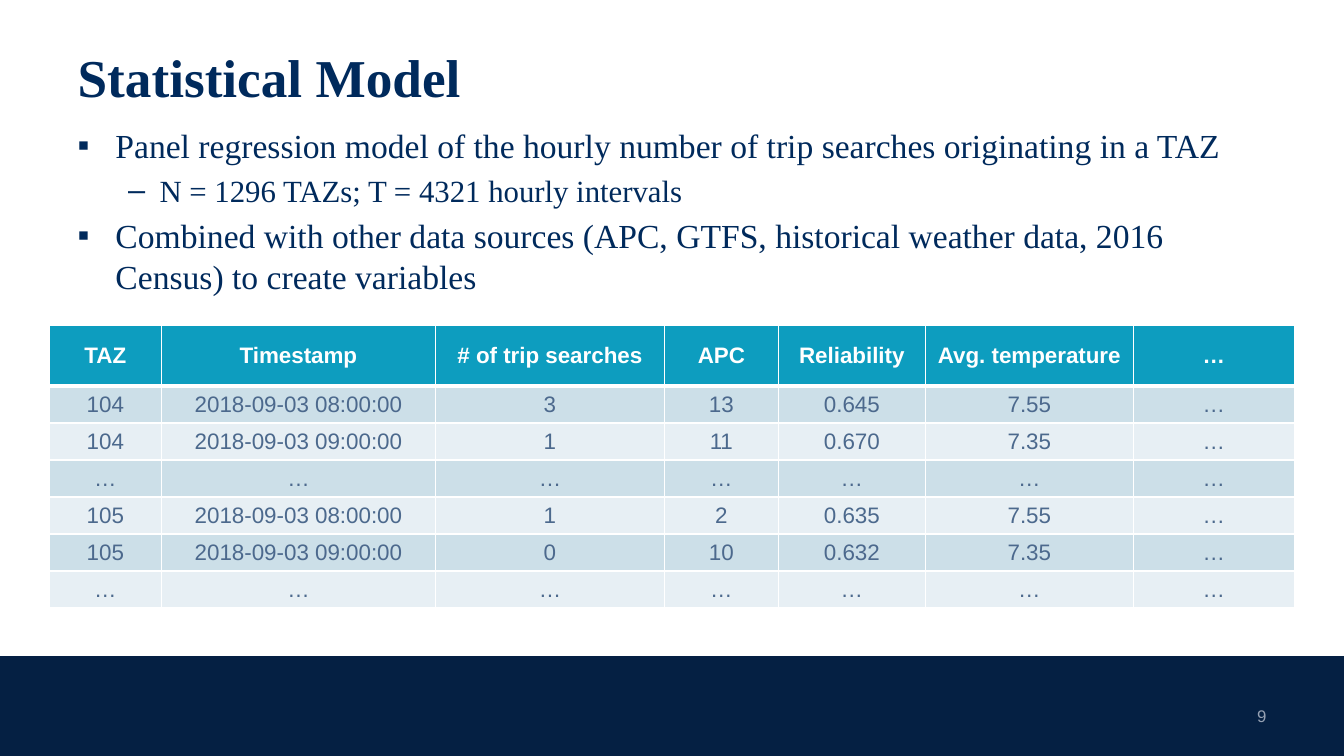
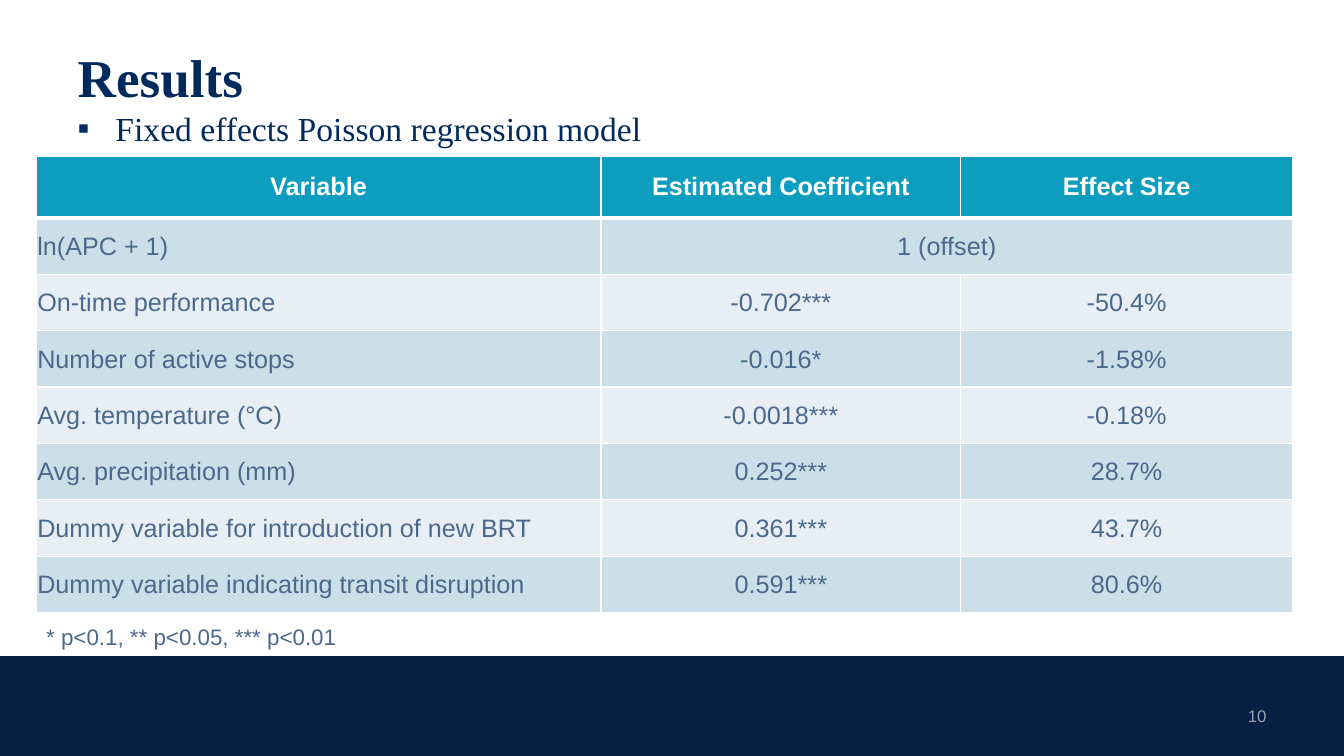
from lxml import etree
from pptx import Presentation
from pptx.dml.color import RGBColor
from pptx.enum import shapes, text
from pptx.oxml import ns
from pptx.util import Inches, Pt

COLORS = {
    "title": "002A5C",
    "band": "052043",
    "number": "96A1B3",
    "header": "0D9DBF",
    "odd_row": "CCDFE8",
    "even_row": "E7EFF4",
    "body": "4C698D",
    "white": "FFFFFF",
}
SERIF, SANS = "Times New Roman", "Arial"
LIST_SIZES = (24, 22)
SLIDE_WIDTH, SLIDE_HEIGHT = 13.33, 7.5
BAND_TOP = 6.51
CENTER, LEFT, RIGHT = text.PP_ALIGN.CENTER, text.PP_ALIGN.LEFT, text.PP_ALIGN.RIGHT


def color(name):
    return RGBColor.from_string(COLORS[name])


def style(para, size, font, color_name, bold=False, align=LEFT):
    para.alignment = align
    for span in para.runs:
        span.font.size = Pt(size)
        span.font.name = font
        span.font.bold = bold
        span.font.color.rgb = color(color_name)


def place(shape, left, top, width, height):
    shape.left, shape.top = Inches(left), Inches(top)
    shape.width, shape.height = Inches(width), Inches(height)


def add_label(page, bounds, words, size, color_name, align=LEFT, wrap=True):
    box = page.shapes.add_textbox(*map(Inches, bounds))
    frame = box.text_frame
    frame.word_wrap = wrap
    frame.text = words
    style(frame.paragraphs[0], size, SANS, color_name, align=align)
    return box


def add_page(deck, title, number):
    """Start a page with its footer band, title and number."""
    page = deck.slides.add_slide(deck.slide_layouts[1])

    # Footer band and page number
    band = page.shapes.add_shape(
        shapes.MSO_SHAPE.RECTANGLE, 0, Inches(BAND_TOP),
        Inches(SLIDE_WIDTH), Inches(SLIDE_HEIGHT - BAND_TOP))
    band.shadow.inherit = False
    band.fill.solid()
    band.fill.fore_color.rgb = color("band")
    band.line.fill.background()
    label = add_label(page, (11.65, 6.9, 1.01, 0.4), str(number), 12, "number", RIGHT)
    label.text_frame.vertical_anchor = text.MSO_ANCHOR.MIDDLE

    # Title
    heading = page.shapes.title
    place(heading, 0.67, 0.31, 12, 0.89)
    heading.text_frame.text = title
    style(heading.text_frame.paragraphs[0], 38, SERIF, "title", bold=True)
    return page


def fill_list(page, bounds, items):
    """Write (level, words) items into the body placeholder."""
    body = page.placeholders[1]
    place(body, *bounds)
    frame = body.text_frame
    for index, (level, words) in enumerate(items):
        para = frame.add_paragraph() if index else frame.paragraphs[0]
        para.text = words
        para.level = level
        if index == 0:
            para.space_before = Pt(0)
        style(para, LIST_SIZES[level], SERIF, "title")
        if level == 0:
            properties = para._p.get_or_add_pPr()
            etree.SubElement(properties, ns.qn("a:buChar")).set("char", "▪")


def set_borders(cell, top, bottom):
    """Draw white cell borders; top and bottom are widths in points."""
    properties = cell._tc.get_or_add_tcPr()
    for side, width in (("L", 1), ("R", 1), ("T", top), ("B", bottom)):
        line = etree.SubElement(properties, ns.qn(f"a:ln{side}"), w=str(Pt(width)))
        fill = etree.SubElement(line, ns.qn("a:solidFill"))
        etree.SubElement(fill, ns.qn("a:srgbClr"), val=COLORS["white"])


def format_cell(cell, words, row, size, align, tight):
    is_header = row == 0
    cell.text = words
    cell.vertical_anchor = text.MSO_ANCHOR.MIDDLE
    if tight and not is_header:
        cell.margin_left = cell.margin_right = cell.margin_top = Inches(0.01)
        cell.margin_bottom = 0
    set_borders(cell, 3 if row == 1 else 1, 3 if is_header else 1)
    fill_name = "header" if is_header else "odd_row" if row % 2 else "even_row"
    cell.fill.solid()
    cell.fill.fore_color.rgb = color(fill_name)
    style(cell.text_frame.paragraphs[0], size, SANS,
          "white" if is_header else "body", is_header,
          CENTER if is_header else align)


def add_grid(page, left, top, widths, header_height, row_height, rows, size,
             first_align=CENTER, tight=False):
    """Add a banded table whose first row is the header."""
    height = header_height + row_height * (len(rows) - 1)
    frame = page.shapes.add_table(
        len(rows), len(widths), Inches(left), Inches(top),
        Inches(sum(widths)), Inches(height))
    table = frame.table
    table.horz_banding = False
    for column, width in zip(table.columns, widths):
        column.width = Inches(width)
    for r, values in enumerate(rows):
        table.rows[r].height = Inches(row_height if r else header_height)
        for c, words in enumerate(values):
            align = CENTER if c else first_align
            format_cell(table.cell(r, c), words, r, size, align, tight)
    return table


def build_model(deck):
    page = add_page(deck, "Statistical Model", 9)
    fill_list(page, (0.67, 1.19, 12, 5.32), [
        (0, "Panel regression model of the hourly number of trip searches originating in a TAZ"),
        (1, "N = 1296 TAZs; T = 4321 hourly intervals"),
        (0, "Combined with other data sources (APC, GTFS, historical weather data, "
            "2016 Census) to create variables"),
    ])
    gap = ["…"] * 7
    add_grid(page, 0.49, 3.23, [1.11, 2.72, 2.27, 1.13, 1.46, 2.06, 1.6], 0.6, 0.35, [
        ["TAZ", "Timestamp", "# of trip searches", "APC", "Reliability",
         "Avg. temperature", "…"],
        ["104", "2018-09-03 08:00:00", "3", "13", "0.645", "7.55", "…"],
        ["104", "2018-09-03 09:00:00", "1", "11", "0.670", "7.35", "…"],
        gap,
        ["105", "2018-09-03 08:00:00", "1", "2", "0.635", "7.55", "…"],
        ["105", "2018-09-03 09:00:00", "0", "10", "0.632", "7.35", "…"],
        gap,
    ], size=16)


def build_results(deck):
    page = add_page(deck, "Results", 10)
    fill_list(page, (0.67, 1.02, 10.52, 0.58), [
        (0, "Fixed effects Poisson regression model"),
    ])
    table = add_grid(page, 0.36, 1.55, [5.6, 3.57, 3.29], 0.61, 0.56, [
        ["Variable", "Estimated Coefficient", "Effect Size"],
        ["ln(APC + 1)", "1 (offset)", ""],
        ["On-time performance", "-0.702***", "-50.4%"],
        ["Number of active stops", "-0.016*", "-1.58%"],
        ["Avg. temperature (°C)", "-0.0018***", "-0.18%"],
        ["Avg. precipitation (mm)", "0.252***", "28.7%"],
        ["Dummy variable for introduction of new BRT", "0.361***", "43.7%"],
        ["Dummy variable indicating transit disruption", "0.591***", "80.6%"],
    ], size=18, first_align=LEFT, tight=True)
    table.cell(1, 1).merge(table.cell(1, 2))

    # Significance levels
    add_label(page, (0.36, 6.13, 3.12, 0.37), "* p<0.1, ** p<0.05, *** p<0.01",
              16, "body", wrap=False)


def main():
    deck = Presentation()
    deck.slide_width, deck.slide_height = Inches(SLIDE_WIDTH), Inches(SLIDE_HEIGHT)
    build_model(deck)
    build_results(deck)
    deck.save("out.pptx")


if __name__ == "__main__":
    main()
